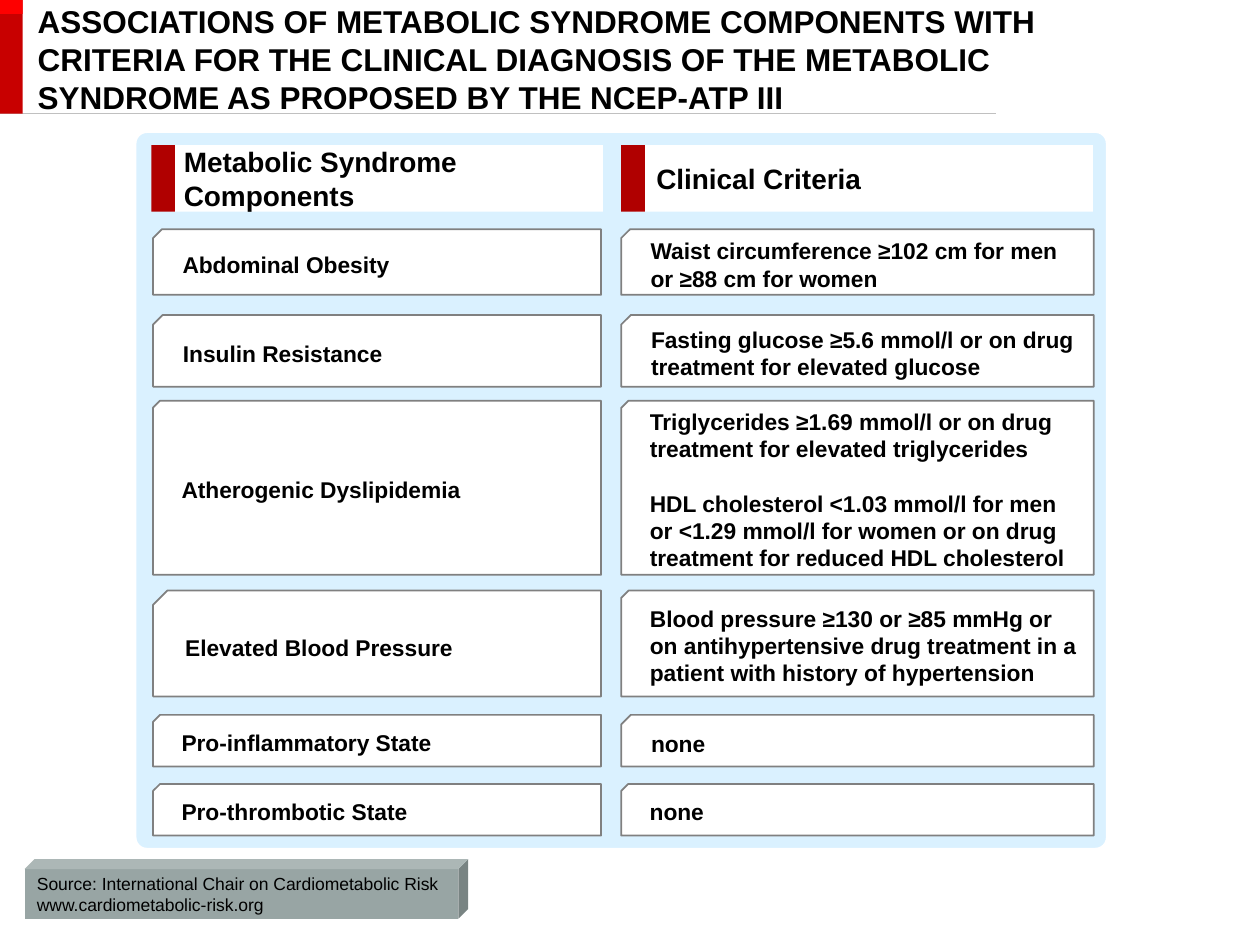
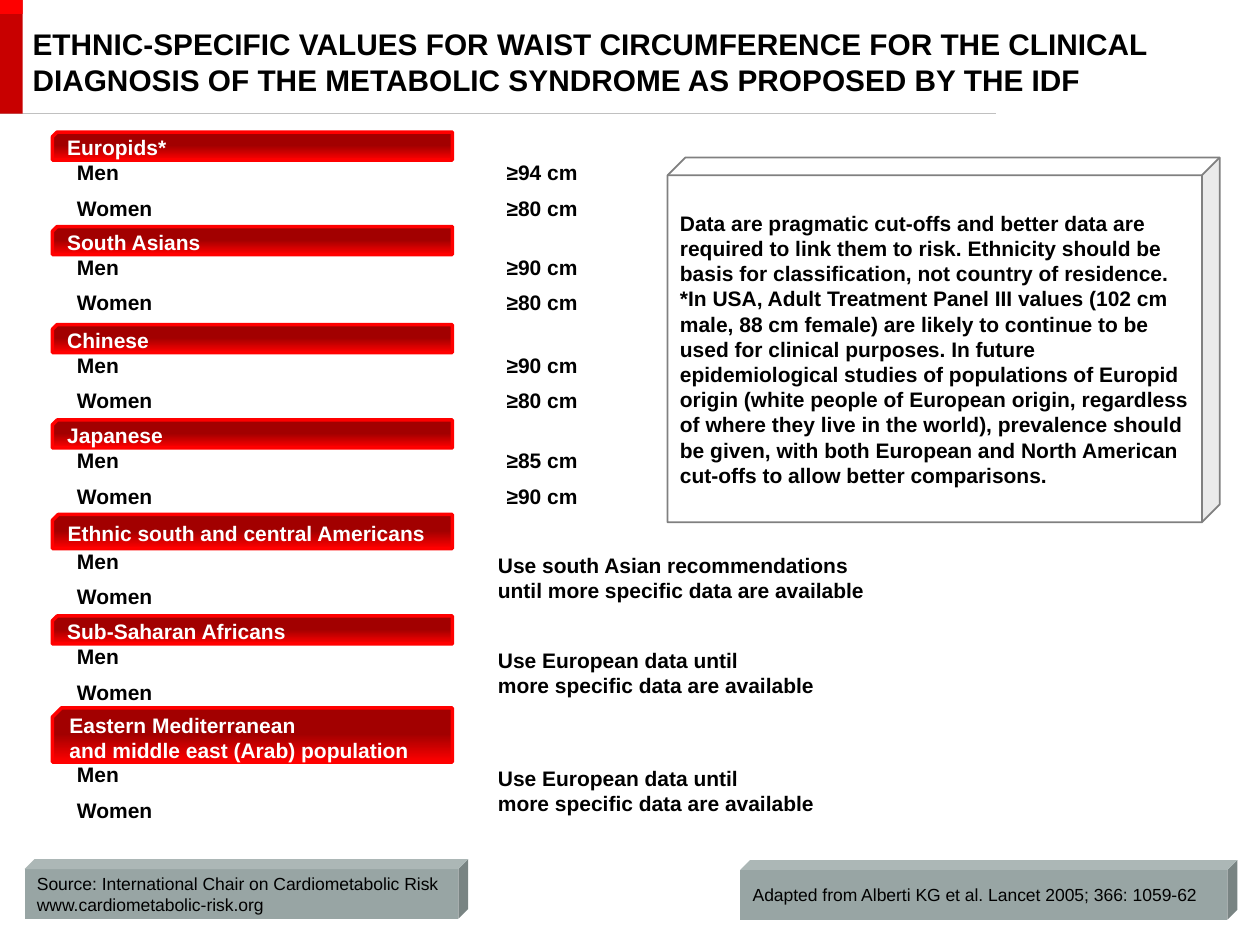
from lxml import etree
from pptx import Presentation
from pptx.dml.color import RGBColor
from pptx.enum.shapes import MSO_CONNECTOR, MSO_SHAPE
from pptx.enum.text import MSO_ANCHOR, PP_ALIGN
from pptx.oxml.ns import qn
from pptx.util import Pt

RECT = MSO_SHAPE.RECTANGLE
ROUND = MSO_SHAPE.ROUNDED_RECTANGLE
SNIP = MSO_SHAPE.SNIP_1_RECTANGLE
CUBE = MSO_SHAPE.CUBE
STRAIGHT = MSO_CONNECTOR.STRAIGHT
MIDDLE = MSO_ANCHOR.MIDDLE
LEFT = PP_ALIGN.LEFT

FONT = "Arial"
COLORS = {
    "text": "000000", "white": "FFFFFF", "rule": "C0C0C0", "edge": "808080",
    "bar": "C80000", "tip": "FE0000", "mark": "B00000", "panel": "CCECFF",
    "note": "98A5A4", "red": "FF0000", "dark": "A20000",
}

# label, criteria, top, height, snip of label, snip of criteria
ROWS = [
    ("Abdominal Obesity",
     ["Waist circumference ≥102 cm for men or ≥88 cm for women"],
     131, 37.5, 0.134, 0.134),
    ("Insulin Resistance",
     ["Fasting glucose ≥5.6 mmol/l or on drug treatment for elevated glucose"],
     180, 41, 0.134, 0.134),
    ("Atherogenic Dyslipidemia",
     ["Triglycerides ≥1.69 mmol/l or on drug",
      "treatment for elevated triglycerides",
      "HDL cholesterol <1.03 mmol/l for men or <1.29 mmol/l for women "
      "or on drug treatment for reduced HDL cholesterol"],
     229, 99.5, 0.039, 0.041),
    ("Elevated Blood Pressure",
     ["Blood pressure ≥130 or ≥85 mmHg or on antihypertensive drug "
      "treatment in a patient with history of hypertension"],
     337.5, 60.5, 0.134, 0.069),
    ("Pro-inflammatory State", ["none"], 408.5, 29.5, 0.134, 0.185),
    ("Pro-thrombotic State", ["none"], 448, 29.5, 0.134, 0.134),
]

EUROPE = ["Use European data until", "more specific data are available"]
# name, top, height, values for men and women, advice
GROUPS = [
    (["Europids*"], 75.5, 16, ["≥94 cm", "≥80 cm"], None),
    (["South Asians"], 129.5, 16, ["≥90 cm", "≥80 cm"], None),
    (["Chinese"], 185.5, 16, ["≥90 cm", "≥80 cm"], None),
    (["Japanese"], 240, 16, ["≥85 cm", "≥90 cm"], None),
    (["Ethnic south and central Americans"], 294, 19.5, [],
     ["Use south Asian recommendations",
      "until more specific data are available"]),
    (["Sub-Saharan Africans"], 352, 16, [], EUROPE),
    (["Eastern Mediterranean", "and middle east (Arab) population"],
     404.5, 31, [], EUROPE),
]

REMARK = [
    "Data are pragmatic cut-offs and better data are",
    "required to link them to risk. Ethnicity should be",
    "basis for classification, not country of residence.",
    "*In USA, Adult Treatment Panel III values (102 cm",
    "male, 88 cm female) are likely to continue to be",
    "used for clinical purposes. In future epidemiological studies of "
    "populations of Europid origin (white people of European origin, "
    "regardless of where they live in the world), prevalence should be "
    "given, with both European and North American cut-offs to allow "
    "better comparisons.",
]


def rgb(name):
    return RGBColor.from_string(COLORS[name])


def write(shape, lines, size, color="text", bold=True, indent=0):
    frame = shape.text_frame
    frame.word_wrap = True
    frame.vertical_anchor = MIDDLE
    for i, line in enumerate(lines):
        para = frame.paragraphs[0] if i == 0 else frame.add_paragraph()
        para.alignment = LEFT
        if indent:
            para._p.get_or_add_pPr().set("marL", str(Pt(indent)))
        run = para.add_run()
        run.text = line
        font = run.font
        font.name, font.size, font.bold = FONT, Pt(size), bold
        font.color.rgb = rgb(color)


def draw(slide, kind, box, fill, line=None, width=1, adj=None, alpha=None):
    """Add a preset shape; snipped ones have the cut at the top left."""
    shape = slide.shapes.add_shape(kind, *map(Pt, box))
    shape.shadow.inherit = False
    shape.fill.solid()
    shape.fill.fore_color.rgb = rgb(fill)
    if alpha:
        tint = shape._element.spPr.find(qn("a:solidFill"))[0]
        etree.SubElement(tint, qn("a:alpha")).set("val", str(alpha * 1000))
    if line:
        shape.line.color.rgb = rgb(line)
        shape.line.width = Pt(width)
    else:
        shape.line.fill.background()
    if adj is not None:
        shape.adjustments[0] = adj
    if kind == SNIP:
        shape._element.spPr.xfrm.set("flipH", "1")
    return shape


def note(slide, left, top, width, lines):
    """Add a grey block with a footer text."""
    block = draw(slide, CUBE, (left, top, width, 34), "note", adj=0.165)
    write(block, lines, 10, bold=False)


def frame(deck, title, size, box):
    """Start a slide with rule, source, red bar and title."""
    slide = deck.slides.add_slide(deck.slide_layouts[6])
    rule = slide.shapes.add_connector(STRAIGHT, Pt(0), Pt(65), Pt(569), Pt(65))
    rule.line.color.rgb = rgb("rule")
    rule.line.width = Pt(0.75)
    etree.SubElement(rule._element.spPr, qn("a:effectLst"))
    note(slide, 14, 491, 253.5,
         ["Source: International Chair on Cardiometabolic Risk",
          "www.cardiometabolic-risk.org"])
    draw(slide, RECT, (0, 0, 13, 65), "bar")
    draw(slide, RECT, (0, 0, 13, 8), "tip")
    write(slide.shapes.add_textbox(*map(Pt, box)), [title], size)
    return slide


def head(slide, left, top, width, lines, shift, indent=0):
    """Add a column heading with a red mark at its left."""
    box = (left + shift, top, width - shift, 38)
    write(draw(slide, RECT, box, "white"), lines, 16, indent=indent)
    draw(slide, RECT, (left, top, 13.5, 38), "mark")


def cell(slide, box, lines, snip):
    shape = draw(slide, SNIP, box, "white", "edge", adj=snip)
    write(shape, lines, 13, indent=7.2)
    return shape


def criteria(deck):
    slide = frame(
        deck, "ASSOCIATIONS OF METABOLIC SYNDROME COMPONENTS WITH CRITERIA "
        "FOR THE CLINICAL DIAGNOSIS OF THE METABOLIC SYNDROME AS PROPOSED "
        "BY THE NCEP-ATP III", 18, (14.4, -3, 652, 73))
    draw(slide, ROUND, (77, 75, 556, 410.5), "panel", "white", 2, 0.017, 71)
    head(slide, 86.5, 83, 258, ["Metabolic Syndrome", "Components"], 11.5)
    head(slide, 355, 83, 269.5, ["Clinical Criteria"], 8.5, 4.5)
    for label, rules, top, height, cut, snip in ROWS:
        cell(slide, (87.5, top, 256, height), [label], cut)
        right = cell(slide, (355, top, 270, height), rules, snip)
        if len(rules) > 1:
            right.text_frame.paragraphs[-1].space_before = Pt(15.5)


def plain(slide, box, lines, indent=0):
    shape = draw(slide, SNIP, box, "white", adj=0.134, alpha=71)
    write(shape, lines, 12, indent=indent)


def group(slide, left, top, height, name, values, advice):
    """Add an ethnic group: red heading, two sexes, values or advice."""
    first = top + height - 1
    for i, sex in enumerate(["Men", "Women"]):
        y = first + i * 20.25
        plain(slide, (left, y, 248, 15), [sex], 14.4)
        if values:
            plain(slide, (left + 253.5, y + 0.7, 75.5, 13.7), [values[i]], 6.5)
    if advice:
        plain(slide, (left + 253.5, first - 2, 255.5, 36.5), advice)
    title = draw(slide, SNIP, (left + 8.5, top, 228.5, height),
                 "red", "red", 2)
    title.fill.gradient()
    title.fill.gradient_angle = 90
    for stop, color, place in zip(title.fill.gradient_stops,
                                  ["red", "dark"], [0, 0.52]):
        stop.color.rgb = rgb(color)
        stop.position = place
    write(title, name, 12, "white")


def waist(deck):
    slide = frame(
        deck, "ETHNIC-SPECIFIC VALUES FOR WAIST CIRCUMFERENCE FOR THE "
        "CLINICAL DIAGNOSIS OF THE METABOLIC SYNDROME AS PROPOSED BY THE IDF",
        17, (11.5, 11, 682.5, 48))
    remark = draw(slide, CUBE, (381.5, 90, 315.5, 208.5), "white", "edge",
                  adj=0.049, alpha=40)
    write(remark, REMARK, 12)
    note(slide, 423, 491.5, 284,
         ["Adapted from Alberti KG et al. Lancet 2005; 366: 1059-62"])
    for name, top, height, values, advice in GROUPS:
        group(slide, 21.5, top, height, name, values, advice)


def main():
    deck = Presentation()
    deck.slide_width, deck.slide_height = Pt(720), Pt(540)
    criteria(deck)
    waist(deck)
    deck.save("out.pptx")


if __name__ == "__main__":
    main()
